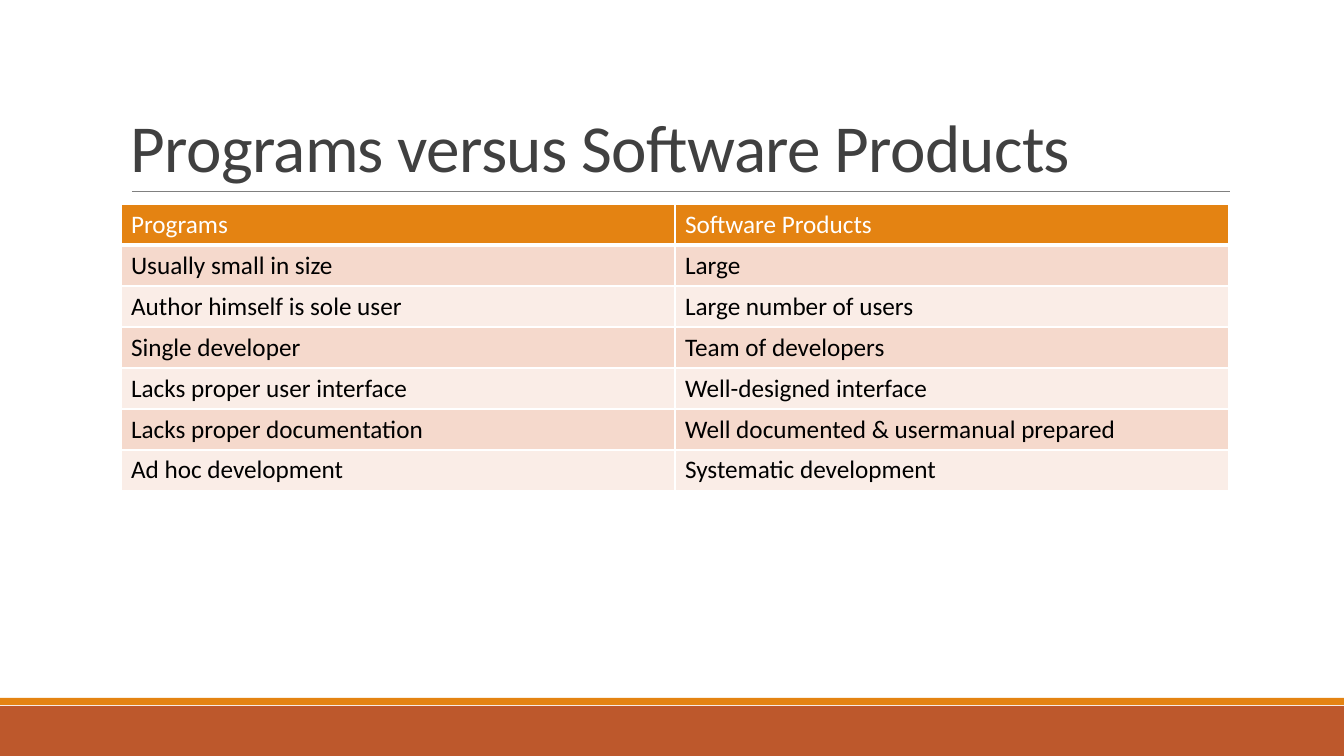
from lxml import etree
from pptx import Presentation
from pptx.dml.color import RGBColor
from pptx.enum.shapes import MSO_CONNECTOR, MSO_SHAPE
from pptx.enum.text import MSO_ANCHOR
from pptx.oxml import parse_xml
from pptx.oxml.ns import nsdecls, qn
from pptx.util import Pt

RECTANGLE = MSO_SHAPE.RECTANGLE
STRAIGHT = MSO_CONNECTOR.STRAIGHT
TOP, BOTTOM = MSO_ANCHOR.TOP, MSO_ANCHOR.BOTTOM

WHITE = RGBColor(0xFF, 0xFF, 0xFF)
BLACK = RGBColor(0x00, 0x00, 0x00)
CHARCOAL = RGBColor(0x40, 0x40, 0x40)
GREY = RGBColor(0x80, 0x80, 0x80)
ORANGE = RGBColor(0xE4, 0x83, 0x12)
RUST = RGBColor(0xBD, 0x58, 0x2C)
DARK_BAND = RGBColor(0xF5, 0xD9, 0xCC)
LIGHT_BAND = RGBColor(0xFA, 0xED, 0xE7)

FONT = "Calibri"
SLIDE_WIDTH, SLIDE_HEIGHT = 1344, 756
EMU_PER_PX = 12192000 / SLIDE_WIDTH

COMPARISON = [
    ("Programs", "Software Products"),
    ("Usually small in size", "Large"),
    ("Author himself is sole user", "Large number of users"),
    ("Single developer", "Team of developers"),
    ("Lacks proper user interface", "Well-designed interface"),
    ("Lacks proper documentation", "Well documented & usermanual prepared"),
    ("Ad hoc development", "Systematic development"),
]


def px(*lengths):
    return [round(length * EMU_PER_PX) for length in lengths]


def write(frame, text, size=18, color=BLACK, anchor=TOP, line_spacing=None, tracking=None):
    frame.word_wrap = True
    frame.vertical_anchor = anchor
    paragraph = frame.paragraphs[0]
    paragraph.line_spacing = line_spacing
    run = paragraph.add_run()
    run.text = text
    run.font.name = FONT
    run.font.size = Pt(size)
    run.font.bold = False
    run.font.color.rgb = color
    if tracking is not None:
        run.font._element.set("spc", str(round(tracking * 100)))


class SlideBuilder:
    def __init__(self, slide):
        self.slide = slide

    def bar(self, left, top, width, height, color):
        bar = self.slide.shapes.add_shape(RECTANGLE, *px(left, top, width, height))
        bar.shadow.inherit = False
        bar.fill.solid()
        bar.fill.fore_color.rgb = color
        bar.line.fill.background()

    def rule(self, x1, y1, x2, y2, color, weight):
        rule = self.slide.shapes.add_connector(STRAIGHT, *px(x1, y1, x2, y2))
        rule.line.color.rgb = color
        rule.line.width = Pt(weight)
        etree.SubElement(rule._element.spPr, qn("a:effectLst"))

    def text(self, left, top, width, height, text, **style):
        box = self.slide.shapes.add_textbox(*px(left, top, width, height))
        write(box.text_frame, text, **style)

    def table(self, left, top, column_width, row_height, rows):
        row_count, column_count = len(rows), len(rows[0])
        width, height = column_width * column_count, row_height * row_count
        table = self.slide.shapes.add_table(
            row_count, column_count, *px(left, top, width, height)
        ).table
        table.horz_banding = False
        for column in table.columns:
            column.width = px(column_width)[0]
        for index, entries in enumerate(rows):
            table.rows[index].height = px(row_height)[0]
            header = index == 0
            band = DARK_BAND if index % 2 else LIGHT_BAND
            for cell, entry in zip(table.rows[index].cells, entries):
                write(cell.text_frame, entry, color=WHITE if header else BLACK)
                self.borders(cell, WHITE, bottom=3 if header else 1)
                cell.fill.solid()
                cell.fill.fore_color.rgb = ORANGE if header else band

    def borders(self, cell, color, bottom):
        properties = cell._tc.get_or_add_tcPr()
        for side, weight in (("L", 1), ("R", 1), ("T", 1), ("B", bottom)):
            properties.append(parse_xml(
                f'<a:ln{side} {nsdecls("a")} w="{Pt(weight)}"><a:solidFill>'
                f'<a:srgbClr val="{color}"/></a:solidFill></a:ln{side}>'
            ))


def main():
    deck = Presentation()
    deck.slide_width, deck.slide_height = px(SLIDE_WIDTH, SLIDE_HEIGHT)
    builder = SlideBuilder(deck.slides.add_slide(deck.slide_layouts[6]))
    builder.bar(0, 706, SLIDE_WIDTH, 50, RUST)
    builder.bar(0, 698, SLIDE_WIDTH, 7, ORANGE)
    builder.rule(132, 191, 1230, 191, GREY, 0.5)
    builder.text(121, 31, 1109, 160, "Programs versus Software Products",
                 size=48, color=CHARCOAL, anchor=BOTTOM, line_spacing=0.85, tracking=-0.5)
    builder.table(121, 204, 554, 41, COMPARISON)
    deck.save("out.pptx")


if __name__ == "__main__":
    main()
